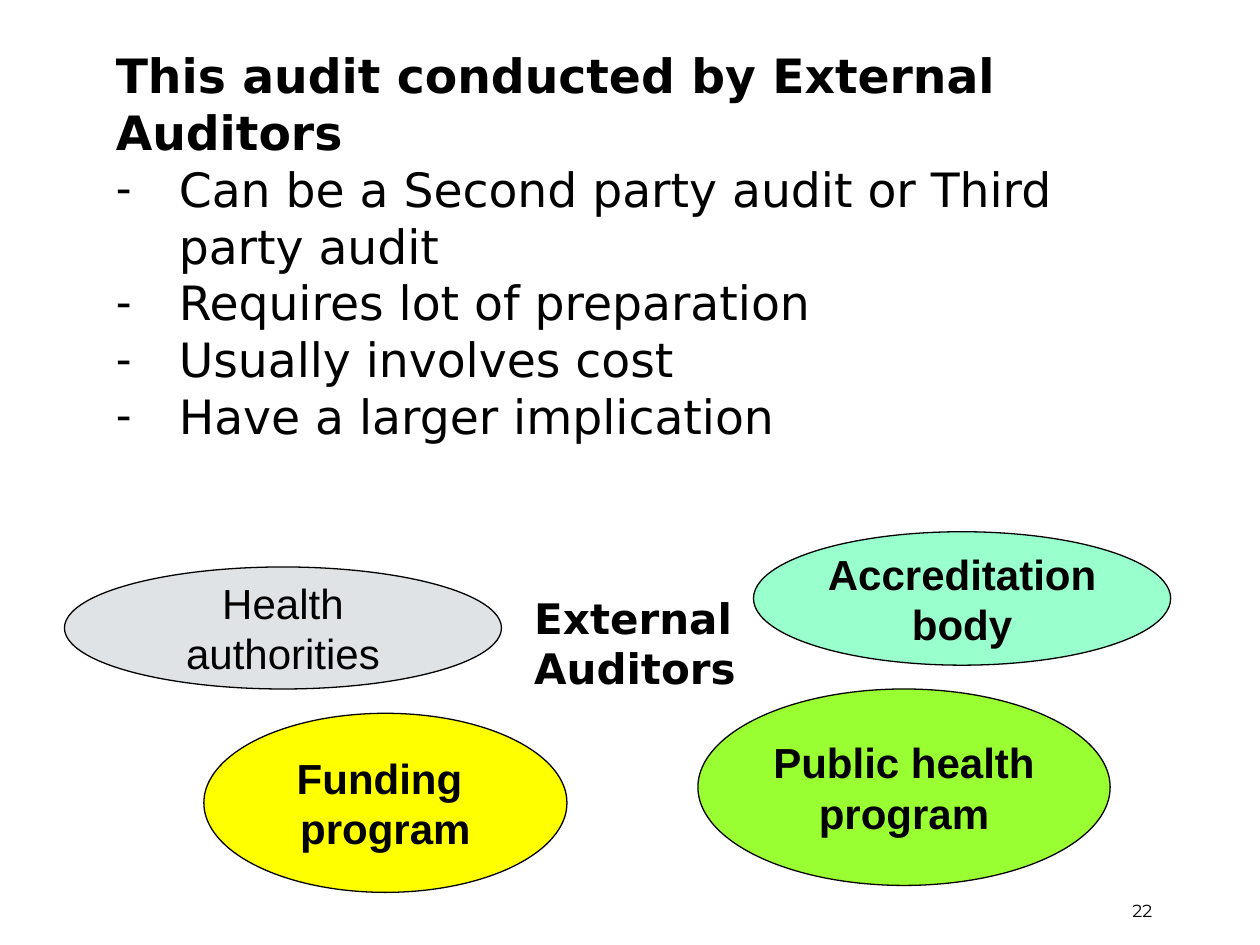
from lxml import etree
from pptx import Presentation
from pptx.dml.color import RGBColor
from pptx.enum import shapes, text
from pptx.oxml.ns import qn
from pptx.util import Cm, Pt

HEAD = "This audit conducted by External Auditors"
POINTS = [
    "Can be a Second party audit or Third party audit",
    "Requires lot of preparation",
    "Usually involves cost",
    "Have a larger implication",
]
# text, fill, bold, wrap, (left, top, width, height) in cm
OVALS = [
    ("Health authorities", "DFE3E5", False, True, (1.3, 11.43, 8.81, 2.46)),
    ("Accreditation body", "99FFCC", True, True, (15.19, 10.72, 8.41, 2.69)),
    ("Public health program", "99FF33", True, True, (14.07, 13.89, 8.31, 3.96)),
    ("Funding \nprogram", "FFFF00", True, False, (4.11, 14.38, 7.32, 3.61)),
]
# text, font, size, bold, anchor, box in cm
LABELS = [
    ("External Auditors", "DejaVu Sans", 24, True, text.MSO_ANCHOR.TOP,
     (10.52, 11.81, 5.72, 3.33)),
    ("22", "Montserrat", 10, False, text.MSO_ANCHOR.MIDDLE,
     (22.58, 17.98, 2.03, 0.76)),
]
LEFT, TOP, WIDTH, LINE = 2.08, 0.94, 21.44, 1.143
HANG = Cm(1.27)


def color(code):
    return RGBColor.from_string(code)


def write(shape, words, face, size, bold, align, anchor, wrap=True):
    frame = shape.text_frame
    frame.text = words
    frame.auto_size = text.MSO_AUTO_SIZE.NONE
    frame.word_wrap = wrap
    frame.vertical_anchor = anchor
    for para in frame.paragraphs:
        para.alignment = align
        para.space_before = Pt(0)
        font = para.font
        font.name, font.size, font.bold = face, Pt(size), bold
        font.color.rgb = color("000000")
    return frame


def place(shape, top, rows):
    """Move a placeholder to the text column, a given number of lines tall."""
    shape.left, shape.top = Cm(LEFT), Cm(top)
    shape.width, shape.height = Cm(WIDTH), Cm(rows * LINE)
    shape.text_frame.margin_top = shape.text_frame.margin_bottom = 0


def dash(para):
    props = para._p.get_or_add_pPr()
    props.set("marL", str(HANG))
    props.set("indent", str(-HANG))
    etree.SubElement(props, qn("a:buChar")).set("char", "-")


deck = Presentation()
deck.slide_width, deck.slide_height = Cm(25.4), Cm(19.05)
slide = deck.slides.add_slide(deck.slide_layouts[1])
left, center = text.PP_ALIGN.LEFT, text.PP_ALIGN.CENTER
top, middle = text.MSO_ANCHOR.TOP, text.MSO_ANCHOR.MIDDLE

title, body = slide.placeholders
place(title, TOP, 2)
write(title, HEAD, "DejaVu Sans", 27, True, left, top)
place(body, TOP + 2 * LINE, 5)
points = write(body, "\n".join(POINTS), "DejaVu Sans", 27, False, left, top)
for para in points.paragraphs:
    dash(para)

for words, fill, bold, wrap, box in OVALS:
    oval = slide.shapes.add_shape(shapes.MSO_SHAPE.OVAL, *map(Cm, box))
    oval.shadow.inherit = False
    oval.fill.solid()
    oval.fill.fore_color.rgb = color(fill)
    oval.line.color.rgb = color("000000")
    oval.line.width = Pt(0.75)
    write(oval, words, "Arial", 24, bold, center, middle, wrap)

for words, face, size, bold, anchor, box in LABELS:
    label = slide.shapes.add_textbox(*map(Cm, box))
    write(label, words, face, size, bold, left, anchor)

deck.save("out.pptx")
